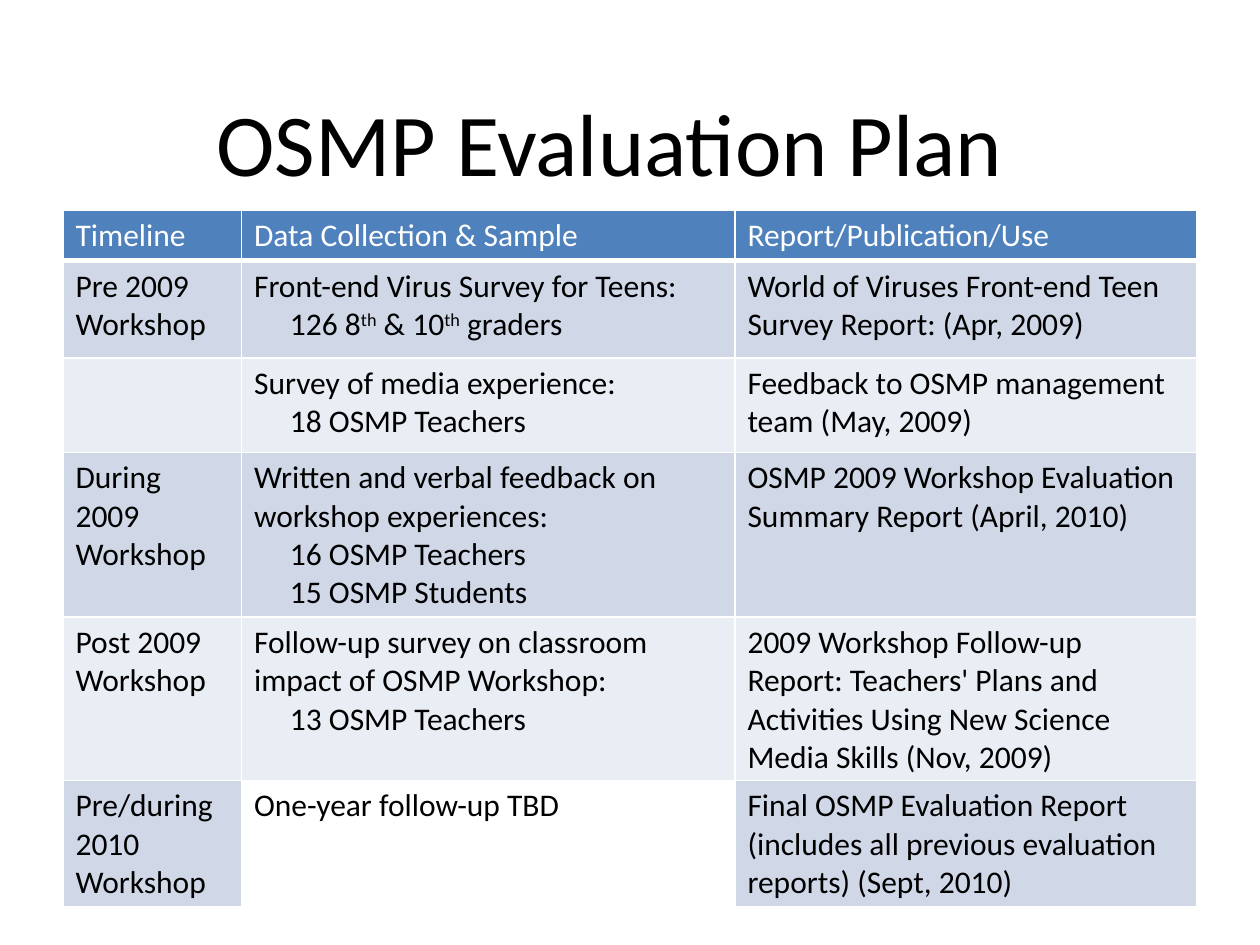
from lxml.etree import SubElement
from pptx import Presentation
from pptx.dml.color import RGBColor
from pptx.enum.text import MSO_ANCHOR, PP_ALIGN
from pptx.oxml.ns import qn
from pptx.util import Pt

BLUE, BAND, PALE = "4F81BD", "D0D8E8", "E9EDF4"
WHITE, BLACK = "FFFFFF", "000000"

COLS = [102, 282, 264]
ROW_HEIGHTS = [29, 55.5, 54, 94, 91.5, 72]

# A tab starts an indented line; text between carets is superscript.
ROWS = [
    ["Timeline", "Data Collection & Sample", "Report/Publication/Use"],
    ["Pre 2009 Workshop",
     "Front-end Virus Survey for Teens:\n\t126 8^th^ & 10^th^ graders",
     "World of Viruses Front-end Teen Survey Report: (Apr, 2009)"],
    ["",
     "Survey of media experience:\n\t18 OSMP Teachers",
     "Feedback to OSMP management team (May, 2009)"],
    ["During 2009 Workshop",
     "Written and verbal feedback on workshop experiences:"
     "\n\t16 OSMP Teachers\n\t15 OSMP Students",
     "OSMP 2009 Workshop Evaluation Summary Report (April, 2010)"],
    ["Post 2009 Workshop",
     "Follow-up survey on classroom impact of OSMP Workshop:\n\t13 OSMP Teachers",
     "2009 Workshop Follow-up Report: Teachers' Plans and Activities "
     "Using New Science Media Skills (Nov, 2009)"],
    ["Pre/during 2010 Workshop",
     "One-year follow-up TBD",
     "Final OSMP Evaluation Report (includes all previous evaluation reports) "
     "(Sept, 2010)"],
]


def rgb(color):
    return RGBColor.from_string(color)


class Deck:
    font = "Calibri"
    size = 18
    indent = 20.5

    def __init__(self, prs):
        self.s = prs.slides.add_slide(prs.slide_layouts[6])

    def style(self, r, size, color):
        r.font.name = self.font
        r.font.size = Pt(size)
        r.font.bold = False
        r.font.color.rgb = rgb(color)

    def title(self, text, x, y, w, h, size):
        tf = self.s.shapes.add_textbox(Pt(x), Pt(y), Pt(w), Pt(h)).text_frame
        tf.word_wrap = True
        tf.vertical_anchor = MSO_ANCHOR.MIDDLE
        p = tf.paragraphs[0]
        p.text = text
        p.alignment = PP_ALIGN.CENTER
        self.style(p.runs[0], size, BLACK)

    def rich_text(self, tf, text, color):
        """Fill a text frame, turning tabs into indents and carets into superscript."""
        tf.text = text.replace("\t", "").replace("^", "")
        for p, line in zip(tf.paragraphs, text.split("\n")):
            if line.startswith("\t"):
                p._p.get_or_add_pPr().set("marL", str(Pt(self.indent)))
            p.text = ""
            for i, part in enumerate(line.strip("\t").split("^")):
                if not part:
                    continue
                r = p.add_run()
                r.text = part
                self.style(r, self.size, color)
                if i % 2:
                    r.font._element.set("baseline", "30000")

    def borders(self, cell, bottom):
        tc_pr = cell._tc.get_or_add_tcPr()
        for side, width in (("L", 1), ("R", 1), ("T", 1), ("B", bottom)):
            ln = SubElement(tc_pr, qn(f"a:ln{side}"), w=str(Pt(width)))
            fill = SubElement(ln, qn("a:solidFill"))
            SubElement(fill, qn("a:srgbClr"), val=WHITE)

    def table(self, rows, x, y, cols, heights):
        tbl = self.s.shapes.add_table(len(rows), len(cols), Pt(x), Pt(y),
                                      Pt(sum(cols)), Pt(sum(heights))).table
        tbl.first_row = tbl.horz_banding = False
        for column, width in zip(tbl.columns, cols):
            column.width = Pt(width)
        for i, (row, height) in enumerate(zip(rows, heights)):
            tbl.rows[i].height = Pt(height)
            header = i == 0
            fill = BLUE if header else BAND if i % 2 else PALE
            for j, text in enumerate(row):
                cell = tbl.cell(i, j)
                self.rich_text(cell.text_frame, text, WHITE if header else BLACK)
                self.borders(cell, 3 if header else 1)
                cell.fill.solid()
                cell.fill.fore_color.rgb = rgb(fill)
        return tbl


def main():
    prs = Presentation()
    prs.slide_width, prs.slide_height = Pt(720), Pt(540)
    deck = Deck(prs)
    deck.title("OSMP Evaluation Plan ", 30, 48, 648, 66, 50.4)
    plan = deck.table(ROWS, 36, 120, COLS, ROW_HEIGHTS)
    plan.cell(5, 1).fill.fore_color.rgb = rgb(WHITE)
    prs.save("out.pptx")


if __name__ == "__main__":
    main()
